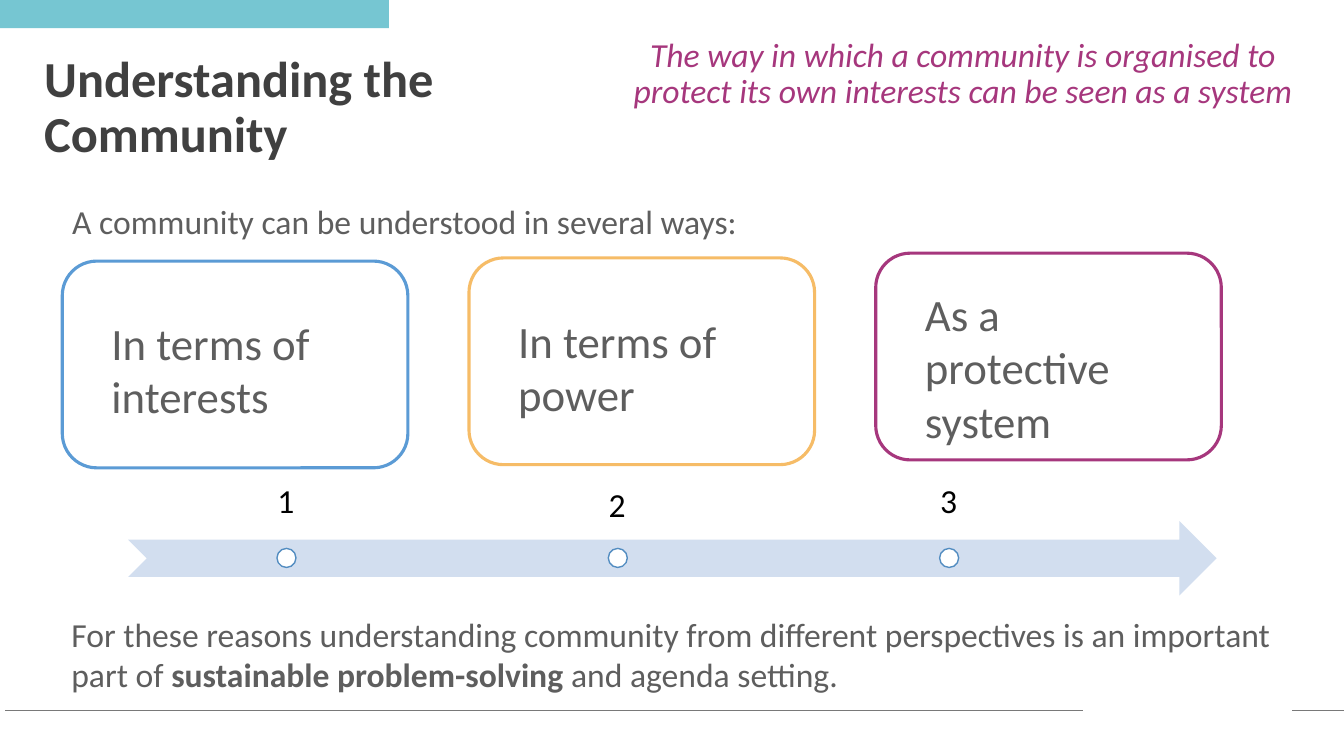
from lxml import etree
from pptx import Presentation, util as u
from pptx.dml.color import RGBColor
from pptx.enum import shapes, text
from pptx.oxml import ns

HUES = {
    "teal": "76C6D2", "rule": "797979", "dark": "404040", "gray": "5E5E5E",
    "plum": "A6377D", "blue": "5B9BD5", "gold": "F6BC67", "pale": "D2DEEF",
    "ring": "538DC1", "white": "FFFFFF", "black": "000000",
}
KINDS = shapes.MSO_SHAPE
MID = text.PP_ALIGN.CENTER
LOW = text.MSO_ANCHOR.BOTTOM
TOP = text.MSO_ANCHOR.TOP


def tint(name):
    return RGBColor.from_string(HUES[name])


def apply(item, vals):
    for key, val in vals.items():
        setattr(item, key, val)


class Deck:
    face = "Calibri"

    def __init__(self, wide, high):
        self.show = Presentation()
        apply(self.show, {"slide_width": u.Cm(wide), "slide_height": u.Cm(high)})
        self.slide = self.show.slides.add_slide(self.show.slide_layouts[5])

    def shape(self, kind, box, fill, line=None, width=1):
        item = self.slide.shapes.add_shape(kind, *map(u.Cm, box))
        item.shadow.inherit = False
        item.fill.solid()
        item.fill.fore_color.rgb = tint(fill)
        if line:
            item.line.color.rgb = tint(line)
            item.line.width = u.Pt(width)
        else:
            item.line.fill.background()

    def rule(self, start, end, high):
        ends = map(u.Cm, (start, high, end, high))
        item = self.slide.shapes.add_connector(shapes.MSO_CONNECTOR.STRAIGHT, *ends)
        item.line.color.rgb = tint("rule")
        item.line.width = u.Pt(0.5)
        etree.SubElement(item._element.spPr, ns.qn("a:effectLst"))

    def prose(self, item, runs, hue, size, para=None, frame=None, **font):
        body = item.text_frame
        apply(body, {"word_wrap": True, "auto_size": text.MSO_AUTO_SIZE.NONE,
                     "vertical_anchor": TOP, **(frame or {})})
        line = body.paragraphs[0]
        apply(line, {"alignment": text.PP_ALIGN.LEFT, **(para or {})})
        for words, bold in runs:
            run = line.add_run()
            run.text = words
            apply(run.font, {"name": self.face, "size": u.Pt(size), "bold": bold, **font})
            run.font.color.rgb = tint(hue)

    def title(self, box, words):
        item = self.slide.shapes.title
        apply(item, dict(zip(("left", "top", "width", "height"), map(u.Cm, box))))
        self.prose(item, [(words, True)], "dark", 36, {"line_spacing": 0.9})

    def label(self, box, runs, hue="gray", size=24, **style):
        item = self.slide.shapes.add_textbox(*map(u.Cm, box))
        self.prose(item, runs, hue, size, **style)


def main():
    deck = Deck(33.87, 19.05)
    deck.shape(KINDS.RECTANGLE, (0, 0, 9.8, 0.71), "teal")
    for start, end in ((27.28, 0.13), (33.87, 32.56)):
        deck.rule(start, end, 17.91)
    deck.title((0.86, 1.24, 14.58, 4.06), "Understanding the Community")
    quote = "The way in which a community is organised to protect its own interests can be seen as a system"
    deck.label((15.54, 0.84, 17.45, 3.12), [(quote, False)], "plum",
               para={"alignment": MID, "line_spacing": 0.9}, italic=True)

    cards = (
        ("In terms of interests", "blue", 6.58, 7.82, 3),
        ("In terms of power", "gold", 6.5, 7.77, 3),
        ("As a protective system", "plum", 6.38, 7.09, 4.37),
    )
    for step, (words, hue, top, first, high) in enumerate(cards):
        left = 1.57 + 10.25 * step
        deck.shape(KINDS.ROUNDED_RECTANGLE, (left, top, 8.71, 5.21), "white", hue, 2.25)
        deck.label((left + 0.99, first, 7.11, high), [(words, False)], size=32)

    deck.shape(KINDS.NOTCHED_RIGHT_ARROW, (3.23, 13.13, 27.43, 1.88), "pale")
    sides = ("left", "top", "right", "bottom")
    inset = {f"margin_{side}": u.Cm(0.48) for side in sides}
    for step, (top, hold) in enumerate(((11.71, LOW), (11.84, TOP), (11.71, LOW))):
        shift = 8.35 * step
        deck.label((3.23 + shift, top, 7.95, 1.88), [(str(step + 1), False)], "black",
                   para={"alignment": MID, "line_spacing": 0.9},
                   frame={"vertical_anchor": hold, **inset})
        deck.shape(KINDS.OVAL, (6.98 + shift, 13.82, 0.48, 0.48), "white", "ring")

    intro = "A community can be understood in several ways:"
    deck.label((1.57, 4.93, 20.47, 1.27), [(intro, False)])
    deck.label((1.55, 15.34, 30.76, 2.31), [
        ("For these reasons understanding community from different perspectives is an important part of ", False),
        ("sustainable problem-solving ", True),
        ("and agenda setting.", False),
    ])
    deck.show.save("out.pptx")


if __name__ == "__main__":
    main()
